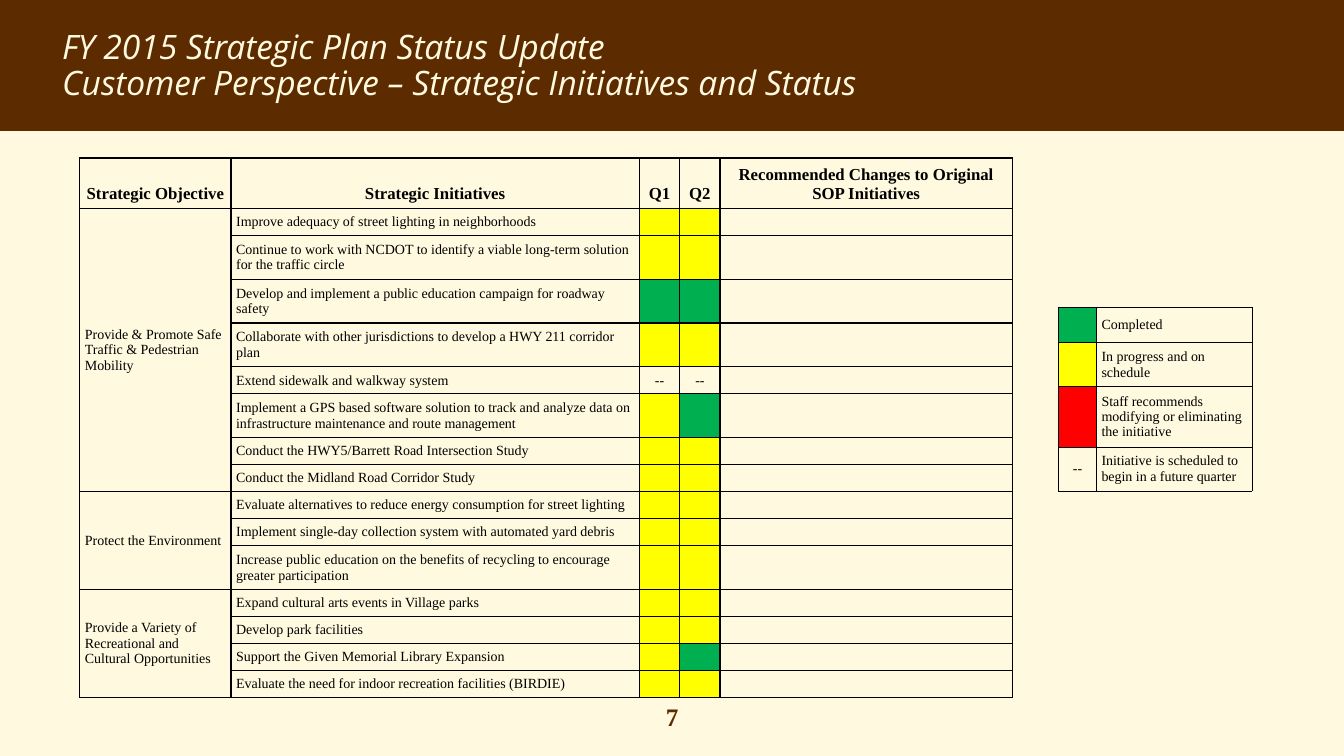
from lxml.etree import SubElement
from pptx import Presentation
from pptx.dml.color import RGBColor
from pptx.enum.shapes import MSO_SHAPE as Preset
from pptx.enum.text import MSO_ANCHOR as Anchor, PP_ALIGN as Align
from pptx.oxml.ns import qn
from pptx.util import Inches, Pt

BROWN = RGBColor(0x5D, 0x2B, 0x00)
CREAM = RGBColor(0xFF, 0xF9, 0xDF)
BLACK = RGBColor(0x00, 0x00, 0x00)
GREEN = RGBColor(0x00, 0xB0, 0x50)
YELLOW = RGBColor(0xFF, 0xFF, 0x00)
RED = RGBColor(0xFF, 0x00, 0x00)

# Status letters: completed, in progress, staff recommends change, future
STATUS_FILLS = {"C": GREEN, "P": YELLOW, "R": RED}
FUTURE = "--"

HEADINGS = ["Strategic Objective", "Strategic Initiatives", "Q1", "Q2",
            "Recommended Changes to Original SOP Initiatives"]

# Each initiative: wording, lines of text, status in Q1 and Q2
OBJECTIVES = {
    "Provide & Promote Safe Traffic & Pedestrian Mobility": [
        ("Improve adequacy of street lighting in neighborhoods", 1, "P", "P"),
        ("Continue to work with NCDOT to identify a viable long-term solution "
         "for the traffic circle", 2, "P", "P"),
        ("Develop and implement a public education campaign for roadway safety", 2, "C", "C"),
        ("Collaborate with other jurisdictions to develop a HWY 211 corridor plan", 2, "P", "P"),
        ("Extend sidewalk and walkway system", 1, FUTURE, FUTURE),
        ("Implement a GPS based software solution to track and analyze data on "
         "infrastructure maintenance and route management", 2, "P", "C"),
        ("Conduct the HWY5/Barrett Road Intersection Study", 1, "P", "P"),
        ("Conduct the Midland Road Corridor Study", 1, "P", "P"),
    ],
    "Protect the Environment": [
        ("Evaluate alternatives to reduce energy consumption for street lighting", 1, "P", "P"),
        ("Implement single-day collection system with automated yard debris", 1, "P", "P"),
        ("Increase public education on the benefits of recycling to encourage "
         "greater participation", 2, "P", "P"),
    ],
    "Provide a Variety of Recreational and Cultural Opportunities": [
        ("Expand cultural arts events in Village parks", 1, "P", "P"),
        ("Develop park facilities", 1, "P", "P"),
        ("Support the Given Memorial Library Expansion", 1, "P", "C"),
        ("Evaluate the need for indoor recreation facilities (BIRDIE)", 1, "P", "P"),
    ],
}
LINE_ROWS = {1: 3.22, 2: 5.22}

LEGEND = [("C", "Completed", 4.2),
          ("P", "In progress and on schedule", 5.2),
          ("R", "Staff recommends modifying or eliminating the initiative", 7.2),
          (FUTURE, "Initiative is scheduled to begin in a future quarter", 5.2)]


class StatusSlide:
    """Places elements on a grid of 160 columns by 90 rows."""
    title_font = "Open Sans"
    body_font = "Times New Roman"
    unit = Inches(1) / 12

    def __init__(self, presentation):
        self.slide = presentation.slides.add_slide(presentation.slide_layouts[6])
        background = self.slide.background.fill
        background.solid()
        background.fore_color.rgb = CREAM

    def grid(self, *lengths):
        return [round(length * self.unit) for length in lengths]

    def band(self, *box):
        shape = self.slide.shapes.add_shape(Preset.RECTANGLE, *self.grid(*box))
        shape.shadow.inherit = False
        shape.fill.solid()
        shape.fill.fore_color.rgb = BROWN
        shape.line.fill.background()

    def fill_text(self, text_frame, text, name, size, color, align=Align.LEFT,
                  bold=False, italic=False, spacing=1.0):
        text_frame.text = text
        text_frame.word_wrap = True
        for paragraph in text_frame.paragraphs:
            paragraph.alignment = align
            paragraph.line_spacing = spacing
            for run in paragraph.runs:
                font = run.font
                font.name, font.size = name, Pt(size)
                font.bold, font.italic = bold, italic
                font.color.rgb = color

    def text(self, box, text, **style):
        shape = self.slide.shapes.add_textbox(*self.grid(*box))
        self.fill_text(shape.text_frame, text, **style)

    def table(self, left, top, columns, rows, line_width):
        box = self.grid(left, top, sum(columns), sum(rows))
        table = self.slide.shapes.add_table(len(rows), len(columns), *box).table
        table.first_row = table.horz_banding = False
        for column, width in zip(table.columns, self.grid(*columns)):
            column.width = width
        for row, height in zip(table.rows, self.grid(*rows)):
            row.height = height
        for cell in table.iter_cells():
            self.cell(cell)
            self.borders(cell, line_width)
            cell.fill.background()
        return table

    def cell(self, cell, text="", size=10, align=Align.LEFT, anchor=Anchor.MIDDLE, bold=False):
        cell.margin_left = cell.margin_right = Inches(0.05)
        cell.margin_top = cell.margin_bottom = Inches(0.05)
        cell.vertical_anchor = anchor
        if text:
            self.fill_text(cell.text_frame, text, self.body_font, size, BLACK, align, bold)
        else:
            # An empty cell keeps small type so that its row stays low
            paragraph = cell.text_frame.paragraphs[0]
            SubElement(paragraph._p, qn("a:endParaRPr"), sz=str(size * 100))

    def borders(self, cell, width):
        properties = cell._tc.get_or_add_tcPr()
        for side in ("lnL", "lnR", "lnT", "lnB"):
            line = SubElement(properties, qn(f"a:{side}"), w=str(Pt(width)))
            fill = SubElement(line, qn("a:solidFill"))
            SubElement(fill, qn("a:srgbClr"), val=str(BLACK))

    def status(self, cell, status):
        if status == FUTURE:
            self.cell(cell, FUTURE, align=Align.CENTER)
        else:
            cell.fill.solid()
            cell.fill.fore_color.rgb = STATUS_FILLS[status]


def main():
    presentation = Presentation()
    presentation.slide_width = Inches(13.33)
    presentation.slide_height = Inches(7.5)
    page = StatusSlide(presentation)

    # Title band and page number
    page.band(0, 0, 160, 15.6)
    page.text((6.2, 3, 147.5, 10.9),
              "FY 2015 Strategic Plan Status Update\n"
              "Customer Perspective – Strategic Initiatives and Status",
              name=page.title_font, size=24, color=CREAM, italic=True, spacing=0.9)
    page.text((74, 82.9, 12, 4.8), "7", name=page.body_font, size=18,
              color=BROWN, align=Align.CENTER, bold=True)

    # Initiatives table
    heights = [LINE_ROWS[lines] for initiatives in OBJECTIVES.values()
               for _, lines, _, _ in initiatives]
    table = page.table(9.5, 18.8, [18, 48.6, 4.8, 4.8, 34.8], [6, *heights], 1)
    for column, heading in enumerate(HEADINGS):
        page.cell(table.cell(0, column), heading, 12, Align.CENTER, Anchor.BOTTOM, True)
    row = 1
    for objective, initiatives in OBJECTIVES.items():
        page.cell(table.cell(row, 0), objective)
        table.cell(row, 0).merge(table.cell(row + len(initiatives) - 1, 0))
        for initiative, _, first, second in initiatives:
            page.cell(table.cell(row, 1), initiative)
            page.status(table.cell(row, 2), first)
            page.status(table.cell(row, 3), second)
            row += 1

    # Legend
    legend = page.table(126, 36.6, [4.5, 18.5], [height for _, _, height in LEGEND], 0.5)
    for row, (status, meaning, _) in enumerate(LEGEND):
        page.status(legend.cell(row, 0), status)
        page.cell(legend.cell(row, 1), meaning)

    presentation.save("out.pptx")


if __name__ == "__main__":
    main()
